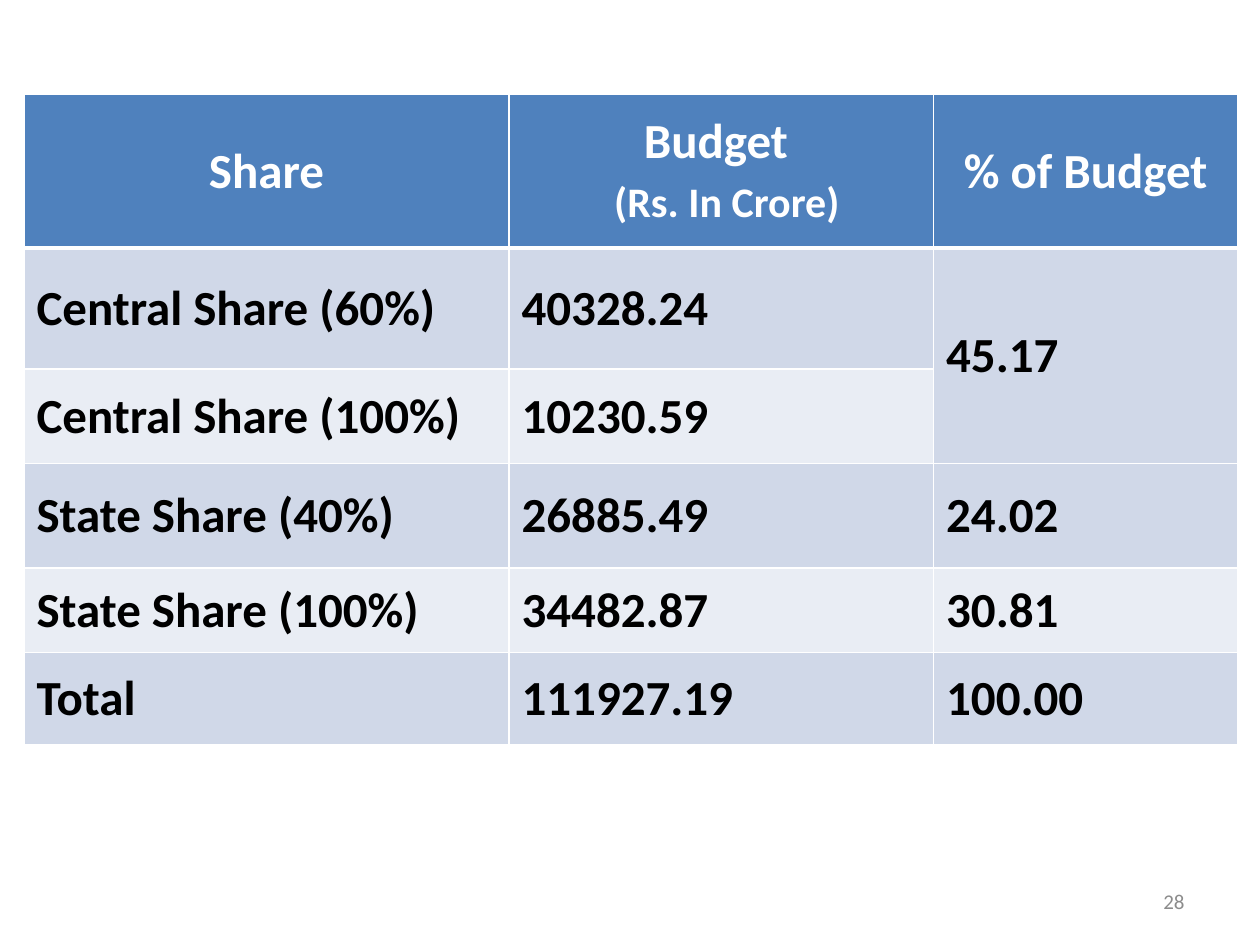
from lxml import etree
from pptx import Presentation
from pptx.dml.color import RGBColor
from pptx.enum.text import MSO_ANCHOR, PP_ALIGN
from pptx.oxml.ns import qn
from pptx.util import Inches, Pt

MIDDLE = MSO_ANCHOR.MIDDLE
LEFT, CENTER, RIGHT = PP_ALIGN.LEFT, PP_ALIGN.CENTER, PP_ALIGN.RIGHT
FONT = "Calibri"
WHITE, BLACK, GRAY, BLUE = "FFFFFF", "000000", "8C8C8C", "4F81BD"
BANDS = ["D0D8E8", "E9EDF4"]

# Content: each cell is a line of text, or several split by newlines
ROWS = [
    ("Share", "Budget \n (Rs. In Crore)", "% of Budget"),
    ("Central Share (60%)", "40328.24", "45.17"),
    ("Central Share (100%)", "10230.59", ""),
    ("State Share (40%)", "26885.49", "24.02"),
    ("State Share (100%)", "34482.87", "30.81"),
    ("Total", "111927.19", "100.00"),
]
COL_WIDTHS = [3.85, 3.37, 2.41]
ROW_HEIGHTS = [1.22, 0.96, 0.75, 0.83, 0.67, 0.73]
PAGE_NUMBER = "28"


def rgb(color):
    return RGBColor.from_string(color)


def set_font(font, size, color, bold=False):
    font.name, font.size, font.bold = FONT, Pt(size), bold
    font.color.rgb = rgb(color)


def set_borders(cell, widths):
    tcPr = cell._tc.get_or_add_tcPr()
    for i, (side, width) in enumerate(widths.items()):
        ln = etree.Element(qn(f"a:ln{side}"), w=str(Pt(width)))
        fill = etree.SubElement(ln, qn("a:solidFill"))
        etree.SubElement(fill, qn("a:srgbClr"), val=WHITE)
        tcPr.insert(i, ln)


def fill_cell(cell, text, row):
    header = row == 0
    cell.fill.solid()
    cell.fill.fore_color.rgb = rgb(BLUE if header else BANDS[(row - 1) % 2])
    cell.vertical_anchor = MIDDLE
    cell.text = text
    for p in cell.text_frame.paragraphs:
        p.alignment = CENTER if header else LEFT
        set_font(p.font, 28, WHITE if header else BLACK, True)
    set_borders(cell, {"L": 1, "R": 1, "T": 3 if row == 1 else 1,
                       "B": 3 if header else 1})


prs = Presentation()
prs.slide_width, prs.slide_height = Inches(10), Inches(7.5)
s = prs.slides.add_slide(prs.slide_layouts[6])

# Budget table
table = s.shapes.add_table(
    len(ROWS), len(COL_WIDTHS), Inches(0.19), Inches(0.75),
    Inches(sum(COL_WIDTHS)), Inches(sum(ROW_HEIGHTS))).table
for column, width in zip(table.columns, COL_WIDTHS):
    column.width = Inches(width)
for row, height in zip(table.rows, ROW_HEIGHTS):
    row.height = Inches(height)
for i, texts in enumerate(ROWS):
    for j, text in enumerate(texts):
        fill_cell(table.cell(i, j), text, i)

# The two central shares have one percentage
table.cell(1, 2).merge(table.cell(2, 2))

# Smaller unit line in the header, after a full-size space
p = table.cell(0, 1).text_frame.paragraphs[1]
unit = p.runs[0].text.strip()
p.runs[0].text = " "
r = p.add_run()
r.text = unit
r.font.size = Pt(24)

# Page number
tf = s.shapes.add_textbox(Inches(7.17), Inches(6.95), Inches(2.33), Inches(0.4)).text_frame
tf.word_wrap = True
tf.vertical_anchor = MIDDLE
p = tf.paragraphs[0]
p.text = PAGE_NUMBER
p.alignment = RIGHT
set_font(p.font, 12, GRAY)

prs.save("out.pptx")
